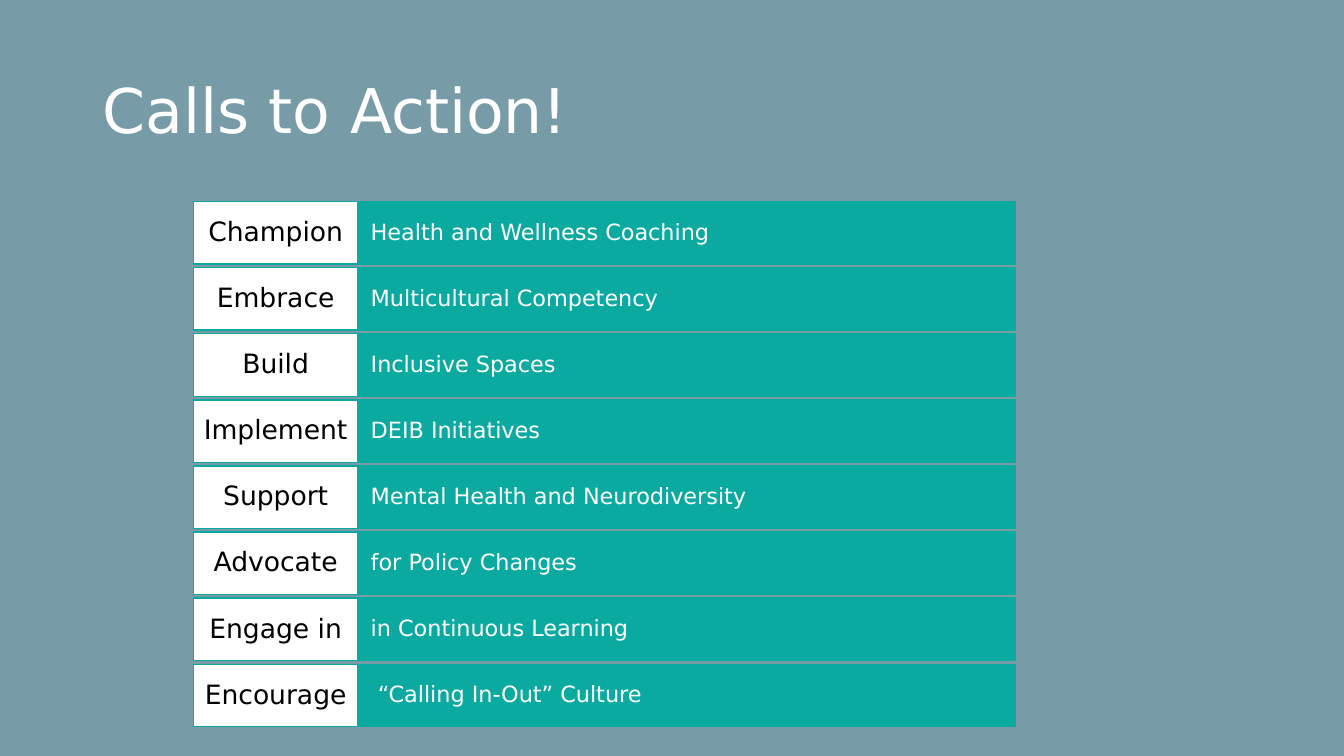
"""Build the Calls to Action slide."""
from pptx import Presentation
from pptx.dml.color import RGBColor
from pptx.enum.shapes import MSO_SHAPE
from pptx.enum.text import MSO_ANCHOR, MSO_AUTO_SIZE, PP_ALIGN
from pptx.util import Pt

TEAL, WHITE, BLACK, SLATE = "0AAAA0", "FFFFFF", "000000", "789BA8"
ACTIONS = [
    ("Champion", "Health and Wellness Coaching"),
    ("Embrace", "Multicultural Competency"),
    ("Build", "Inclusive Spaces"),
    ("Implement", "DEIB Initiatives"),
    ("Support", "Mental Health and Neurodiversity"),
    ("Advocate", "for Policy Changes"),
    ("Engage in", "in Continuous Learning"),
    ("Encourage", " “Calling In-Out” Culture"),
]
LEFT, TOP, PITCH, HEIGHT = 138.24, 144, 47.21, 44.64
VERB_WIDTH, GOAL_WIDTH = 117.36, 469.44


def paint(fill, color):
    fill.solid()
    fill.fore_color.rgb = RGBColor.from_string(color)


def write(shape, text, size=16, color=WHITE, align=PP_ALIGN.LEFT, inset=(7.2, 3.6)):
    frame = shape.text_frame
    frame.word_wrap = True
    frame.auto_size = MSO_AUTO_SIZE.NONE
    frame.vertical_anchor = MSO_ANCHOR.MIDDLE
    frame.margin_left = frame.margin_right = Pt(inset[0])
    frame.margin_top = frame.margin_bottom = Pt(inset[1])
    para = frame.paragraphs[0]
    para.alignment = align
    para.line_spacing = 0.9
    para.space_before = Pt(0)
    span = para.add_run()
    span.text = text
    span.font.name = "DejaVu Sans"
    span.font.size = Pt(size)
    paint(span.font.fill, color)


class Slide:
    def __init__(self, deck, background):
        self.page = deck.slides.add_slide(deck.slide_layouts[5])
        paint(self.page.background.fill, background)

    def title(self, text, left, top, width, height):
        box = self.page.shapes.title
        box.left, box.top = Pt(left), Pt(top)
        box.width, box.height = Pt(width), Pt(height)
        write(box, text, size=44)

    def bar(self, text, left, top, width, fill, **style):
        box = self.page.shapes.add_shape(
            MSO_SHAPE.RECTANGLE, Pt(left), Pt(top), Pt(width), Pt(HEIGHT))
        box.shadow.inherit = False
        paint(box.fill, fill)
        paint(box.line.fill, TEAL)
        box.line.width = Pt(1)
        write(box, text, **style)


def main():
    deck = Presentation()
    deck.slide_width, deck.slide_height = Pt(960), Pt(540)
    slide = Slide(deck, SLATE)
    slide.title("Calls to Action!", 66, 28.8, 828, 104.4)
    for row, (verb, goal) in enumerate(ACTIONS):
        top = TOP + row * PITCH
        slide.bar(goal, LEFT + VERB_WIDTH, top, GOAL_WIDTH, TEAL, inset=(9.2, 11.4))
        slide.bar(verb, LEFT, top, VERB_WIDTH, WHITE, size=19, color=BLACK,
                  align=PP_ALIGN.CENTER, inset=(6.2, 4.4))
    deck.save("out.pptx")


if __name__ == "__main__":
    main()
